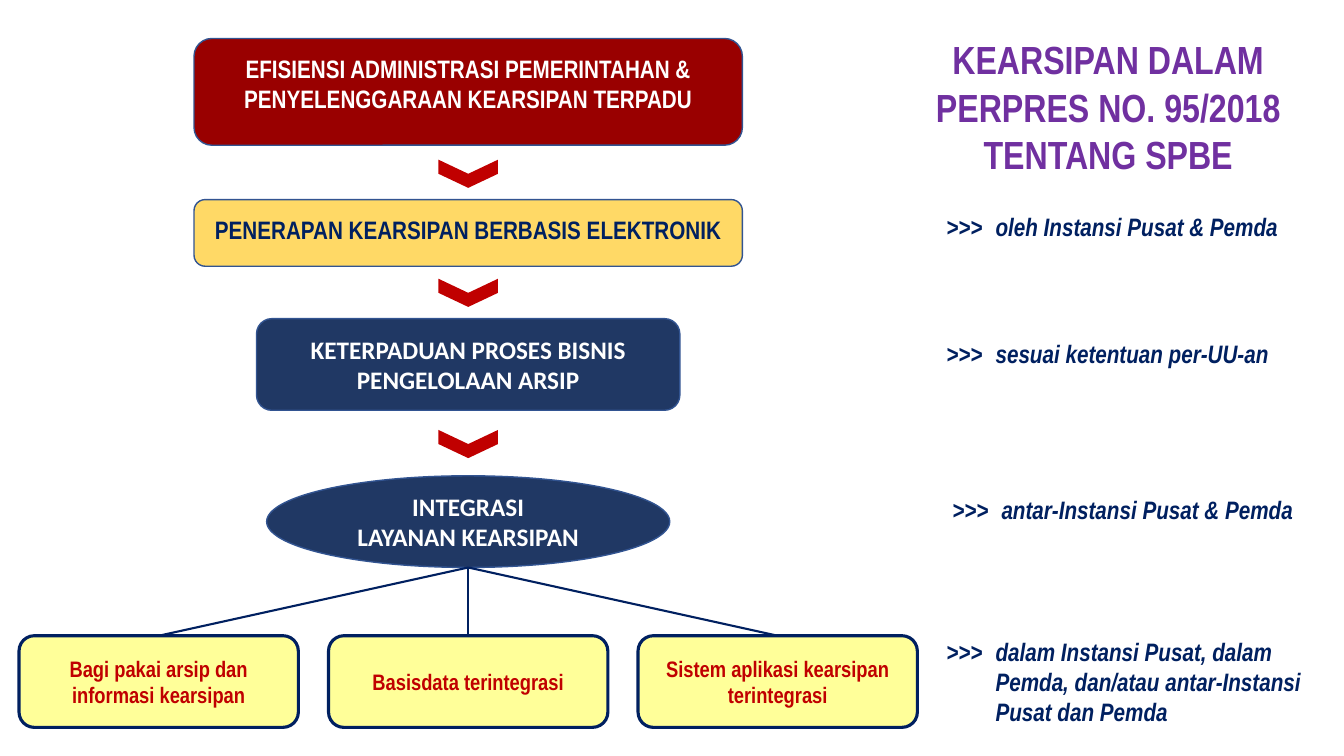
from lxml import etree
from pptx import Presentation
from pptx.dml.color import RGBColor as RGB
from pptx.enum.shapes import MSO_CONNECTOR as LINE, MSO_SHAPE as SHAPE
from pptx.enum.text import MSO_ANCHOR as ANCHOR, MSO_AUTO_SIZE as FIT, PP_ALIGN as ALIGN
from pptx.oxml.ns import qn
from pptx.util import Cm, Pt

COLORS = {
    "maroon": "990000", "red": "C00000", "gold": "FFD966", "cream": "FFFF99",
    "navy": "203864", "ink": "002060", "border": "325491",
    "purple": "7030A0", "white": "FFFFFF",
}
NARROW, SANS = "Arial Narrow", "Calibri"
AXIS = 11.8  # centre line of the flow, cm


class FlowSlide:
    """Adds styled elements to one slide; lengths are in centimetres."""

    def __init__(self, prs):
        self.slide = prs.slides.add_slide(prs.slide_layouts[5])
        self.shapes = self.slide.shapes

    def color(self, name):
        return RGB.from_string(COLORS[name])

    def fill_text(self, tf, lines, color, size=18, font=NARROW, italic=False,
                  align=ALIGN.CENTER, wrap=True, anchor=ANCHOR.MIDDLE):
        tf.word_wrap, tf.auto_size, tf.vertical_anchor = wrap, FIT.NONE, anchor
        for i, line in enumerate(lines):
            p = tf.add_paragraph() if i else tf.paragraphs[0]
            p.alignment = align
            r = p.add_run()
            r.text = line
            r.font.name, r.font.size = font, Pt(size)
            r.font.bold, r.font.italic = True, italic
            r.font.color.rgb = self.color(color)

    def title(self, x, y, w, h, text):
        sp = self.shapes.title
        sp.left, sp.top, sp.width, sp.height = Cm(x), Cm(y), Cm(w), Cm(h)
        self.fill_text(sp.text_frame, [text], "purple", size=28)

    def box(self, cx, y, w, h, fill, kind=SHAPE.ROUNDED_RECTANGLE,
            line="border", weight=1):
        sp = self.shapes.add_shape(kind, Cm(cx - w / 2), Cm(y), Cm(w), Cm(h))
        sp.shadow.inherit = False
        sp.fill.solid()
        sp.fill.fore_color.rgb = self.color(fill)
        if line:
            sp.line.color.rgb = self.color(line)
            sp.line.width = Pt(weight)
        else:
            sp.line.fill.background()
        return sp

    def arrow(self, y):
        sp = self.box(AXIS, y, 0.71, 1.5, "red", SHAPE.CHEVRON, line=None)
        sp.rotation = 90

    def label(self, y, w, h, lines, color):
        sp = self.shapes.add_textbox(Cm(AXIS - w / 2), Cm(y), Cm(w), Cm(h))
        self.fill_text(sp.text_frame, lines, color, wrap=False, anchor=ANCHOR.TOP)

    def note(self, x, y, h, text):
        sp = self.shapes.add_textbox(Cm(x), Cm(y), Cm(9.63), Cm(h))
        tf = sp.text_frame
        self.fill_text(tf, [">>>\t" + text], "ink", italic=True,
                       align=ALIGN.LEFT, anchor=ANCHOR.TOP)
        # Hanging indent: the tab lands on the left margin
        pPr = tf.paragraphs[0]._p.get_or_add_pPr()
        pPr.set("marL", str(Cm(1.24)))
        pPr.set("indent", str(-Cm(1.24)))

    def branch(self, x1, y1, x2, y2):
        c = self.shapes.add_connector(LINE.STRAIGHT, Cm(x1), Cm(y1), Cm(x2), Cm(y2))
        c.line.color.rgb = self.color("ink")
        c.line.width = Pt(1.5)
        etree.SubElement(c._element.spPr, qn("a:effectLst"))


def main():
    prs = Presentation()
    prs.slide_width, prs.slide_height = Cm(33.87), Cm(19.05)
    s = FlowSlide(prs)

    # Heading
    s.title(22.02, 0.76, 11.81, 3.84,
            "KEARSIPAN DALAM PERPRES NO. 95/2018 TENTANG SPBE")

    # Goal and implementation
    s.box(AXIS, 0.97, 13.82, 2.69, "maroon")
    s.label(1.22, 11.91, 1.8, ["EFISIENSI ADMINISTRASI PEMERINTAHAN &",
                               "PENYELENGGARAAN KEARSIPAN TERPADU"], "white")
    s.box(AXIS, 5.03, 13.82, 1.68, "gold")
    s.label(5.28, 13.41, 1.02, ["PENERAPAN KEARSIPAN BERBASIS ELEKTRONIK"], "ink")

    # Process and integration
    steps = [
        (8.03, 10.67, SHAPE.ROUNDED_RECTANGLE,
         ["KETERPADUAN PROSES BISNIS", "PENGELOLAAN ARSIP"]),
        (11.99, 10.16, SHAPE.OVAL, ["INTEGRASI", "LAYANAN KEARSIPAN"]),
    ]
    for y, w, kind, lines in steps:
        sp = s.box(AXIS, y, w, 2.31, "navy", kind)
        s.fill_text(sp.text_frame, lines, "white", font=SANS)

    # Arrows between steps
    for y in (3.63, 6.63, 10.44):
        s.arrow(y)

    # Integrated services and their branches
    services = ["Bagi pakai arsip dan informasi kearsipan",
                "Basisdata terintegrasi",
                "Sistem aplikasi kearsipan terintegrasi"]
    for i, text in enumerate(services):
        cx = AXIS + (i - 1) * 7.8
        s.branch(AXIS, 14.3, cx, 16.02)
        sp = s.box(cx, 16.02, 7.04, 2.31, "cream", line="ink", weight=2.25)
        s.fill_text(sp.text_frame, [text], "red", size=16)

    # Side notes
    notes = [
        (23.6, 5.21, 1.02, "oleh Instansi Pusat & Pemda"),
        (23.6, 8.41, 1.02, "sesuai ketentuan per-UU-an"),
        (23.75, 12.34, 1.02, "antar-Instansi Pusat & Pemda"),
        (23.6, 15.9, 2.57, "dalam Instansi Pusat, dalam Pemda, "
                           "dan/atau antar-Instansi Pusat dan Pemda"),
    ]
    for note in notes:
        s.note(*note)

    prs.save("out.pptx")


if __name__ == "__main__":
    main()
